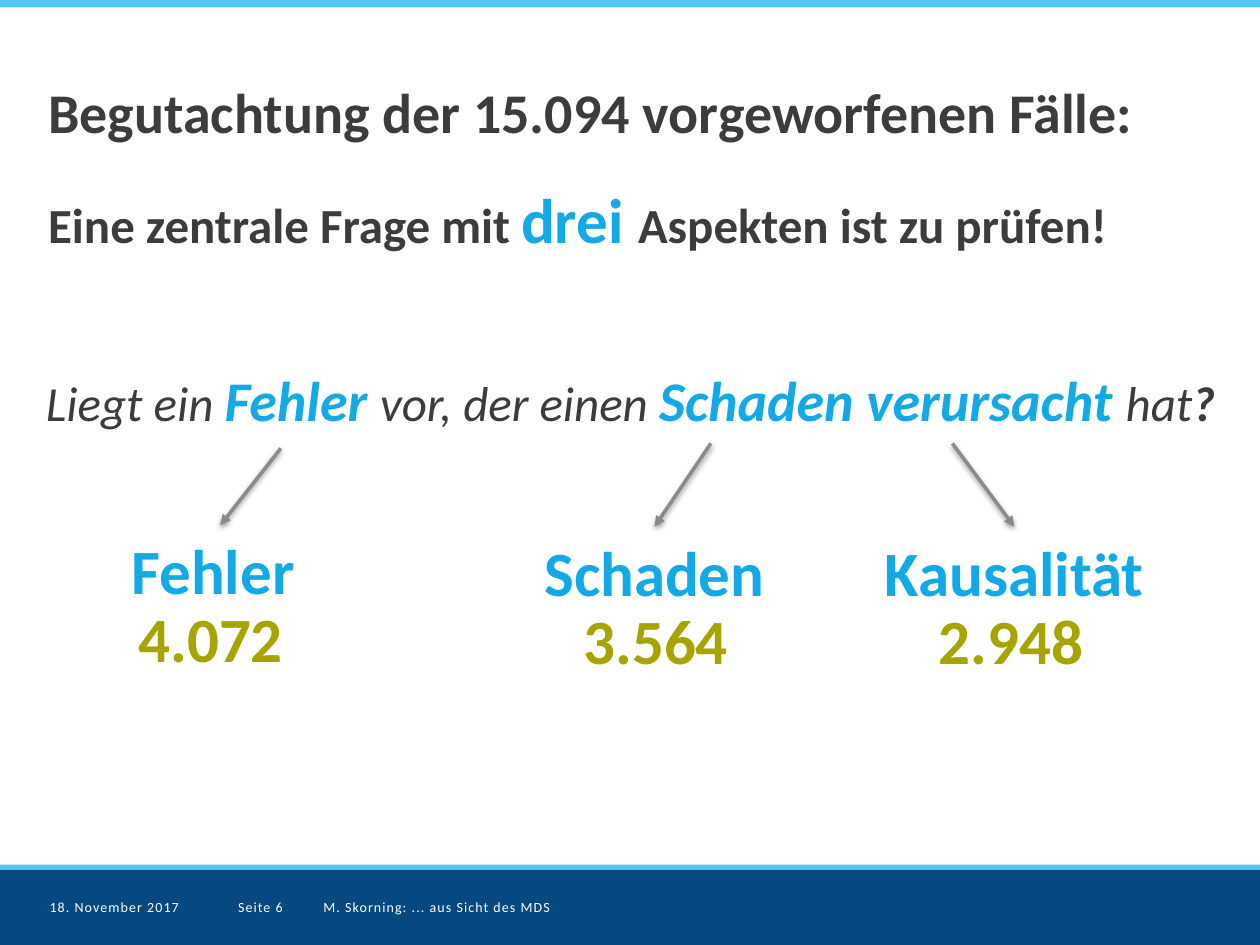
from lxml import etree
from pptx import Presentation
from pptx.dml.color import RGBColor
from pptx.enum.dml import MSO_LINE
from pptx.enum.shapes import MSO_CONNECTOR, MSO_SHAPE
from pptx.enum.text import MSO_ANCHOR, MSO_AUTO_SIZE, PP_ALIGN
from pptx.oxml import parse_xml
from pptx.oxml.ns import nsdecls, qn
from pptx.util import Cm, Pt

LEFT, CENTER = PP_ALIGN.LEFT, PP_ALIGN.CENTER
TOP, MIDDLE = MSO_ANCHOR.TOP, MSO_ANCHOR.MIDDLE
RECT, LINE, SOLID = MSO_SHAPE.RECTANGLE, MSO_CONNECTOR.STRAIGHT, MSO_LINE.SOLID
FIXED = MSO_AUTO_SIZE.NONE
FONT = "Calibri"
DARK, BLUE, OLIVE, GRAY = "3B3C3B", "12A9E6", "A6A500", "898B89"
SKY, NAVY, WHITE = "58C6F2", "064882", "FFFFFF"
SHADOW = (
    f'<a:effectLst {nsdecls("a")}><a:outerShdw blurRad="39370" dist="20320" '
    'dir="5400000" rotWithShape="0"><a:srgbClr val="000000">'
    '<a:alpha val="38000"/></a:srgbClr></a:outerShdw></a:effectLst>'
)


def tint(text):
    """Return the colour for a hex string."""
    return RGBColor.from_string(text)


def setup(frame, anchor=TOP, pad=(0, 0, 0, 0)):
    """Set wrapping, anchor and insets in cm: left, top, right, bottom."""
    frame.word_wrap = True
    frame.auto_size = FIXED
    frame.vertical_anchor = anchor
    frame.margin_left, frame.margin_top, frame.margin_right, frame.margin_bottom = map(Cm, pad)


def style(para, size=None, color=None, bold=None, align=LEFT):
    """Format a paragraph as a whole."""
    para.alignment = align
    font = para.font
    font.name, font.bold = FONT, bold
    if size:
        font.size = Pt(size)
    if color:
        font.color.rgb = tint(color)


def add_runs(para, parts):
    """Add runs given as text, size, colour and bold."""
    for text, size, color, bold in parts:
        run = para.add_run()
        run.text = text
        run.font.size, run.font.bold = Pt(size), bold
        run.font.color.rgb = tint(color)


def add_text(slide, box, text, size, color, bold=None, align=LEFT,
             anchor=TOP, pad=(0.25, 0.13, 0.25, 0.13)):
    """Add a box with one plain paragraph."""
    shape = slide.shapes.add_textbox(*map(Cm, box))
    setup(shape.text_frame, anchor, pad)
    para = shape.text_frame.paragraphs[0]
    para.text = text
    style(para, size, color, bold, align)
    return shape


def add_bar(slide, box, color):
    """Add a plain coloured bar."""
    bar = slide.shapes.add_shape(RECT, *map(Cm, box))
    bar.shadow.inherit = False
    bar.fill.solid()
    bar.fill.fore_color.rgb = tint(color)
    bar.line.fill.background()


def add_footer(slide, left, top, width, height):
    """Add the footer band with date, page and speaker."""
    add_bar(slide, (left, top - 0.1, width, 0.1), SKY)
    add_bar(slide, (left, top, width, height), NAVY)
    cells = [
        (1, 3.8, "18. November 2017", 0, 0),
        (4.8, 1.73, "Seite 6", 0, 0.25),
        (6.27, 13.06, "M. Skorning: ... aus Sicht des MDS", 0.25, 0.25),
    ]
    for shift, wide, text, start, end in cells:
        cell = add_text(slide, (left + shift, top, wide, height), text, 8, WHITE,
                        anchor=MIDDLE, pad=(start, 0, end, 0))
        run = cell.text_frame.paragraphs[0].runs[0]
        run.font.size = Pt(8)
        run.font._element.set("spc", "60")


def set_title(slide, box):
    """Place and fill the title."""
    title = slide.shapes.title
    title.left, title.top, title.width, title.height = map(Cm, box)
    frame = title.text_frame
    setup(frame)
    lines = [
        [("Begutachtung der 15.094 vorgeworfenen Fälle:", 32, DARK, True)],
        [("Eine zentrale Frage mit ", 28, DARK, True), ("drei ", 36, BLUE, True),
         ("Aspekten ist zu prüfen!", 28, DARK, True)],
    ]
    for num, parts in enumerate(lines):
        para = frame.add_paragraph() if num else frame.paragraphs[0]
        style(para, bold=True)
        para.line_spacing = Pt(32)
        para.space_before = Pt(32 * num)
        add_runs(para, parts)


def add_question(slide, box):
    """Add the central question."""
    shape = slide.shapes.add_textbox(*map(Cm, box))
    setup(shape.text_frame)
    para = shape.text_frame.paragraphs[0]
    style(para, align=CENTER)
    para.font.italic = True
    para.line_spacing = Pt(24)
    add_runs(para, [
        ("Liegt ein ", 28, DARK, False), ("Fehler ", 32, BLUE, True),
        ("vor, der einen ", 28, DARK, False), ("Schaden verursacht ", 32, BLUE, True),
        ("hat", 28, DARK, False), ("?", 28, DARK, True),
    ])


def add_arrow(slide, start, label):
    """Add a shadowed arrow from a point to the top of a label."""
    x, y = map(Cm, start)
    arrow = slide.shapes.add_connector(LINE, x, y, x, y)
    arrow.end_connect(label, 0)
    arrow.line.color.rgb = tint(GRAY)
    arrow.line.width = Pt(2)
    arrow.line.dash_style = SOLID
    props = arrow._element.spPr
    etree.SubElement(props.find(qn("a:ln")), qn("a:tailEnd"), type="triangle")
    props.append(parse_xml(SHADOW))


def add_aspect(slide, box, name, count, mid, start):
    """Add an aspect with its count centred at mid and its arrow."""
    left, top, width, height = box
    label = add_text(slide, box, name, 36, BLUE, True, CENTER)
    wide = 3.6
    add_text(slide, (left + mid - wide / 2, top + 1.37, wide, height),
             count, 36, OLIVE, True, CENTER)
    add_arrow(slide, (left + start[0], top + start[1]), label)


def main():
    """Build the slide and save it."""
    deck = Presentation()
    deck.slide_width, deck.slide_height = Cm(25.4), Cm(19.05)
    slide = deck.slides.add_slide(deck.slide_layouts[5])
    add_bar(slide, (0, 0, 25.4, 0.15), SKY)
    add_footer(slide, 0, 17.53, 25.4, 1.52)
    set_title(slide, (0.97, 1.78, 23.39, 3))
    add_question(slide, (0.43, 7.87, 24.56, 0.85))
    aspects = [
        (1.57, 10.59, 5.74, "Fehler ", "4.072", 2.68, (4.09, -1.55)),
        (9.7, 10.62, 6.99, "Schaden", "3.564", 3.52, (4.63, -1.68)),
        (16.64, 10.62, 7.62, "Kausalität", "2.948", 3.74, (2.56, -1.68)),
    ]
    for left, top, width, name, count, mid, start in aspects:
        add_aspect(slide, (left, top, width, 1.8), name, count, mid, start)
    deck.save("out.pptx")


if __name__ == "__main__":
    main()
